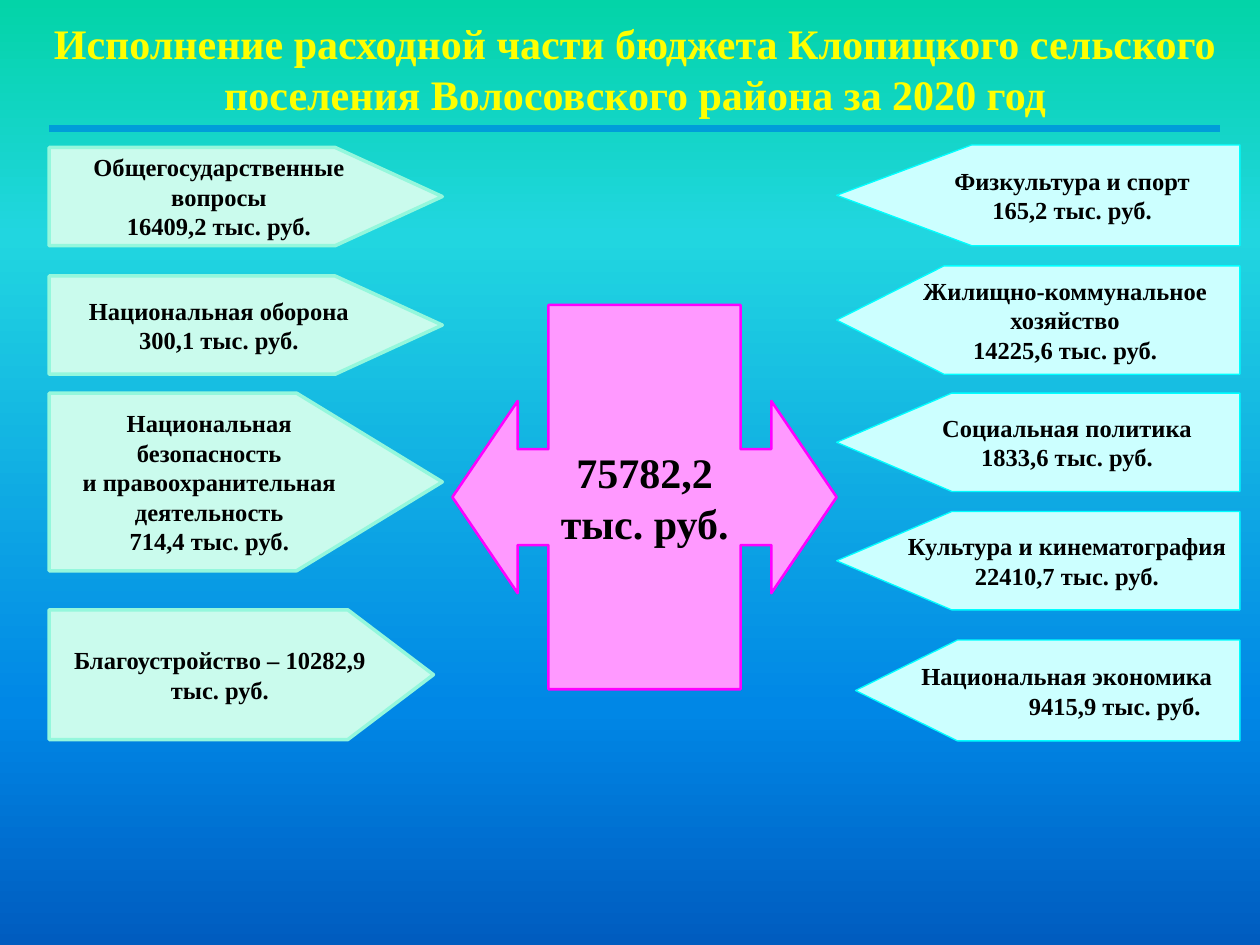
import pptx
import pptx.util
import pptx.dml.color
import pptx.enum.shapes
import pptx.enum.text
import pptx.oxml
import pptx.oxml.ns
from lxml import etree

Inches, Pt = pptx.util.Inches, pptx.util.Pt
RGBColor = pptx.dml.color.RGBColor
Shapes = pptx.enum.shapes.MSO_SHAPE
Anchor = pptx.enum.text.MSO_ANCHOR

FONT = "Times New Roman"
BLACK = RGBColor(0x00, 0x00, 0x00)
YELLOW = RGBColor(0xFF, 0xFF, 0x00)
RULE_BLUE = RGBColor(0x00, 0x9D, 0xD9)
PINK = RGBColor(0xFF, 0x99, 0xFF)
MAGENTA = RGBColor(0xFF, 0x00, 0xFF)
PALE_CYAN = RGBColor(0xCC, 0xFF, 0xFF)
CYAN = RGBColor(0x00, 0xFF, 0xFF)
PALE_MINT = RGBColor(0xCA, 0xFB, 0xED)
MINT = RGBColor(0x94, 0xF7, 0xDC)
BACKGROUND_STOPS = [
    (0, RGBColor(0x03, 0xD4, 0xA8)),
    (25, RGBColor(0x21, 0xD6, 0xE0)),
    (75, RGBColor(0x00, 0x87, 0xE6)),
    (100, RGBColor(0x00, 0x5C, 0xBF)),
]

LEFT_EDGE = 0.39
RIGHT_EDGE = 9.84

# top, width, height, point depth, lines
LEFT_ITEMS = [
    (1.17, 3.12, 0.78, 1.09, ["Общегосударственные вопросы", "16409,2 тыс. руб."]),
    (2.19, 3.12, 0.78, 1.09, ["Национальная оборона", "300,1 тыс. руб."]),
    (3.12, 3.12, 1.41, 0.82, ["Национальная безопасность",
                              "и правоохранительная деятельность",
                              "714,4 тыс. руб."]),
    (4.84, 3.05, 1.03, 0.66, ["Благоустройство – 10282,9 тыс. руб."]),
]
RIGHT_ITEMS = [
    (1.15, 3.2, 0.8, 1.34, ["Физкультура и спорт", "165,2 тыс. руб."]),
    (2.11, 3.2, 0.86, 0.99, ["Жилищно-коммунальное хозяйство", "14225,6 тыс. руб."]),
    (3.12, 3.2, 0.78, 1.17, ["Социальная политика", "1833,6 тыс. руб."]),
    (4.06, 3.2, 0.78, 1.17, ["Культура и кинематография", "22410,7 тыс. руб."]),
    (5.08, 3.05, 0.8, 1.01, ["Национальная экономика", "9415,9 тыс. руб."]),
]


def paint_background(slide):
    fill = slide.background.fill
    fill.gradient()
    fill.gradient_angle = 270
    stops = slide.background._cSld.find(".//" + pptx.oxml.ns.qn("a:gsLst"))
    for stop in list(stops):
        stops.remove(stop)
    for position, color in BACKGROUND_STOPS:
        stop = etree.SubElement(stops, pptx.oxml.ns.qn("a:gs"), pos=str(position * 1000))
        etree.SubElement(stop, pptx.oxml.ns.qn("a:srgbClr"), val=str(color))


def write_text(shape, lines, size, color=BLACK, anchor=Anchor.MIDDLE, wrap=True):
    text_frame = shape.text_frame
    text_frame.text = "\n".join(lines)
    text_frame.word_wrap = wrap
    text_frame.vertical_anchor = anchor
    for paragraph in text_frame.paragraphs:
        paragraph.alignment = pptx.enum.text.PP_ALIGN.CENTER
        for run in paragraph.runs:
            run.font.name = FONT
            run.font.size = Pt(size)
            run.font.bold = True
            run.font.color.rgb = color


def add_block(slide, kind, box, adjustments, fill, line, line_width):
    shape = slide.shapes.add_shape(kind, *map(Inches, box))
    for index, value in enumerate(adjustments):
        shape.adjustments[index] = value
    shape.shadow.inherit = False
    shape.fill.solid()
    shape.fill.fore_color.rgb = fill
    shape.line.color.rgb = line
    shape.line.width = Pt(line_width)
    return shape


def set_body(shape, name, value):
    shape.text_frame._txBody.bodyPr.set(name, value)


def indent(paragraph, side, inches):
    """Set the left (marL) or right (marR) margin of a paragraph."""
    paragraph._p.get_or_add_pPr().set(side, str(Inches(inches)))


def add_title(slide):
    title = slide.shapes.add_textbox(*map(Inches, (LEFT_EDGE, 0.16, 9.3, 0.78)))
    write_text(title, ["Исполнение расходной части бюджета Клопицкого сельского "
                       "поселения Волосовского района за 2020 год"],
               24, YELLOW, Anchor.BOTTOM)
    text_frame = title.text_frame
    text_frame.margin_left = text_frame.margin_right = text_frame.margin_bottom = 0


def add_title_rule(slide):
    rule = slide.shapes.add_connector(
        pptx.enum.shapes.MSO_CONNECTOR.STRAIGHT,
        Inches(LEFT_EDGE), Inches(1.02), Inches(9.68), Inches(1.02))
    rule.line.color.rgb = RULE_BLUE
    rule.line.width = Pt(3.75)
    etree.SubElement(rule._element.spPr, pptx.oxml.ns.qn("a:effectLst"))


def add_total(slide):
    total = add_block(slide, Shapes.UP_DOWN_ARROW_CALLOUT, (3.59, 2.42, 3.05, 3.05),
                      (0.25, 0.25, 0.17, 0.5), PINK, MAGENTA, 1.5)
    total.rotation = 270
    write_text(total, ["75782,2", "тыс. руб."], 24, wrap=False)
    set_body(total, "vert", "eaVert")


def add_left_item(slide, top, width, height, depth, lines):
    item = add_block(slide, Shapes.PENTAGON, (LEFT_EDGE, top, width, height),
                     [depth], PALE_MINT, MINT, 2)
    write_text(item, lines, 14)
    return item


def add_right_item(slide, top, width, height, depth, lines):
    """Add a tag pointing left, with its text kept upright."""
    item = add_block(slide, Shapes.PENTAGON, (RIGHT_EDGE - width, top, width, height),
                     [depth], PALE_CYAN, CYAN, 0.75)
    item.rotation = 180
    write_text(item, lines, 14)
    set_body(item, "rot", "10800000")
    return item


def main():
    presentation = pptx.Presentation()
    presentation.slide_width = Inches(10)
    presentation.slide_height = Inches(7.5)
    slide = presentation.slides.add_slide(presentation.slide_layouts[6])
    paint_background(slide)
    add_title(slide)
    add_title_rule(slide)
    add_total(slide)
    right_items = [add_right_item(slide, *item) for item in RIGHT_ITEMS]
    for item in LEFT_ITEMS:
        add_left_item(slide, *item)
    economy, amount = right_items[-1].text_frame.paragraphs
    indent(economy, "marR", 0.1)
    indent(amount, "marL", 0.76)
    presentation.save("out.pptx")


if __name__ == "__main__":
    main()
